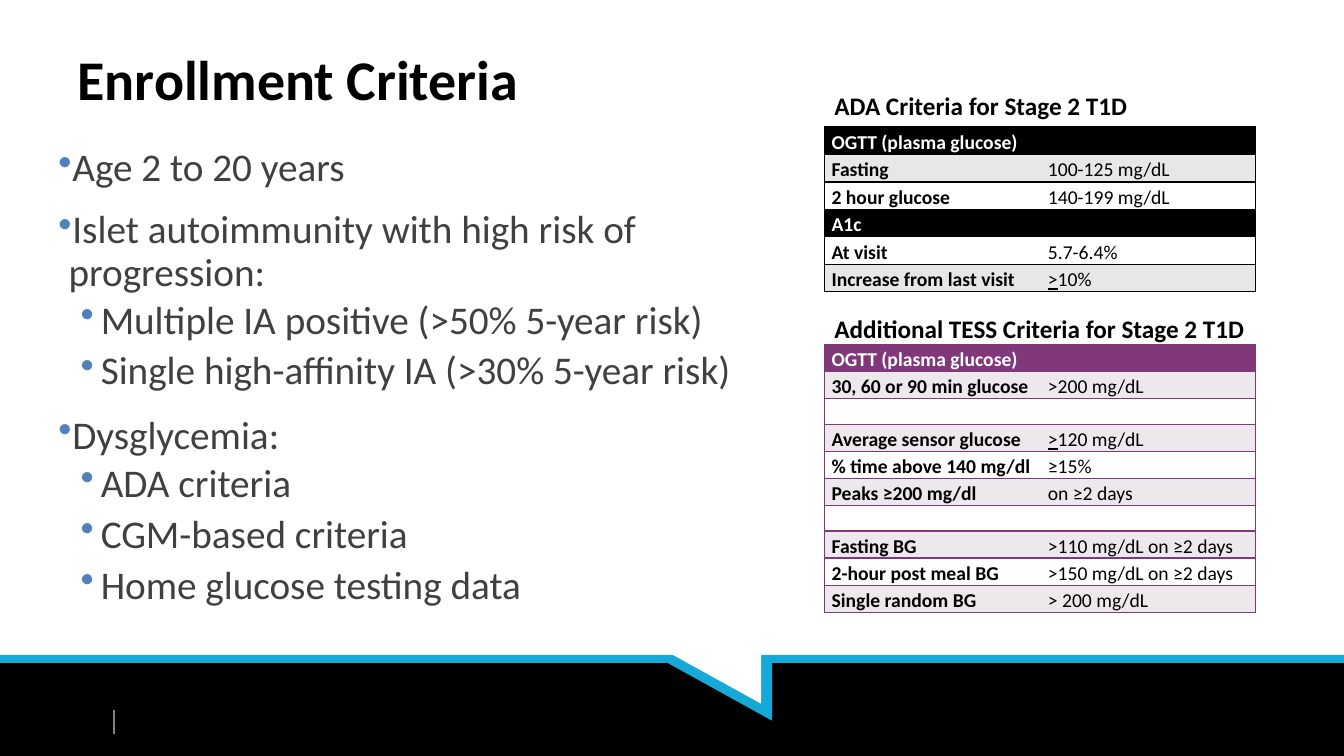
"""Build the Enrollment Criteria slide with its two glucose tables."""
from lxml.etree import SubElement as Sub
from pptx import Presentation
from pptx.dml.color import RGBColor
from pptx.enum.shapes import MSO_CONNECTOR as Link, MSO_SHAPE as Kind
from pptx.enum.text import MSO_ANCHOR as Anchor, PP_ALIGN as Align
from pptx.oxml.ns import qn
from pptx.util import Pt

FONT = "Calibri"
BLACK, WHITE, BLUE, PLUM = "000000", "FFFFFF", "14A9D8", "80387B"
GREY, MAUVE = "E7E7E7", "EDE8EC"
TITLE = "Enrollment Criteria"
POINTS = [
    (0, "Age 2 to 20 years"),
    (0, "Islet autoimmunity with high risk of progression:"),
    (1, "Multiple IA positive (>50% 5-year risk)"),
    (1, "Single high-affinity IA (>30% 5-year risk)"),
    (0, "Dysglycemia:"),
    (1, "ADA criteria"),
    (1, "CGM-based criteria"),
    (1, "Home glucose testing data"),
]
# Each level: left margin, first indent, space before, space after.
LEVELS = [(7.2, -7.2, 12, 2), (30.2, -14.4, 2, 4)]
ADA = [
    (BLACK, "OGTT (plasma glucose)", ""),
    (GREY, "Fasting", "100-125 mg/dL"),
    (WHITE, "2 hour glucose", "140-199 mg/dL"),
    (BLACK, "A1c", ""),
    (WHITE, "At visit", "5.7-6.4%"),
    (GREY, "Increase from last visit", (">", "10%")),
]
TESS = [
    (PLUM, "OGTT (plasma glucose)", ""),
    (MAUVE, "30, 60 or 90 min glucose", ">200 mg/dL"),
    (WHITE, "", ""),
    (MAUVE, "Average sensor glucose", (">", "120 mg/dL")),
    (WHITE, "% time above 140 mg/dl", "≥15%"),
    (MAUVE, "Peaks ≥200 mg/dl", "on ≥2 days"),
    (WHITE, "", ""),
    (MAUVE, "Fasting BG", ">110 mg/dL on ≥2 days"),
    (WHITE, "2-hour post meal BG", ">150 mg/dL on ≥2 days"),
    (MAUVE, "Single random BG", "> 200 mg/dL"),
]
LEFT, COLS, ROW = 589, (154.5, 153.5), 18.25
TABLES = [
    ("ADA Criteria for Stage 2 T1D", 61.2, 244, 90.7, BLACK, ADA),
    ("Additional TESS Criteria for Stage 2 T1D", 220.3, 335.5, 246.2, PLUM, TESS),
]
SHAPES = [
    (Kind.RECTANGLE, 0, 470.9, 960, 69.1, BLACK, 0),
    (Kind.RIGHT_TRIANGLE, 475.9, 473, 75.6, 41.8, BLUE, 180),
    (Kind.RIGHT_TRIANGLE, 468, 460.8, 75.6, 41.8, WHITE, 180),
]
LINES = [(0, 470.9, 960, 470.9, BLUE, 6), (81.4, 506.9, 81.4, 524.2, "808080", 1)]


def rgb(code):
    return RGBColor.from_string(code)


def style(par, size, color, bold=False):
    font = par.font
    font.name, font.size, font.bold = FONT, Pt(size), bold
    font.color.rgb = rgb(color)


def draw(slide, kind, x, y, w, h, color, turn):
    shape = slide.shapes.add_shape(kind, Pt(x), Pt(y), Pt(w), Pt(h))
    shape.shadow.inherit = False
    shape.fill.solid()
    shape.fill.fore_color.rgb = rgb(color)
    shape.line.fill.background()
    shape.rotation = turn


def rule(slide, x, y, right, low, color, width):
    line = slide.shapes.add_connector(Link.STRAIGHT, Pt(x), Pt(y), Pt(right), Pt(low))
    line.line.color.rgb = rgb(color)
    line.line.width = Pt(width)
    Sub(line._element.spPr, qn("a:effectLst"))


def write(slide, x, y, w, h):
    frame = slide.shapes.add_textbox(Pt(x), Pt(y), Pt(w), Pt(h)).text_frame
    frame.word_wrap = True
    return frame


def list_points(slide):
    frame = write(slide, 41.8, 102.2, 509, 358.6)
    frame.margin_left = frame.margin_right = 0
    for i, (level, text) in enumerate(POINTS):
        par = frame.add_paragraph() if i else frame.paragraphs[0]
        margin, indent, before, after = LEVELS[level]
        par.text, par.level, par.line_spacing = text, level, 0.9
        par.space_before, par.space_after = Pt(before if i else 0), Pt(after)
        props = par._p.get_or_add_pPr()
        props.set("marL", str(Pt(margin)))
        props.set("indent", str(Pt(indent)))
        Sub(Sub(props, qn("a:buClr")), qn("a:srgbClr"), val="4F81BD")
        Sub(props, qn("a:buChar"), char="•")
        style(par, 28, "404040")


def edge(cell, col, color):
    props = cell._tc.get_or_add_tcPr()
    inner = "R" if col == 0 else "L"
    for side in "LRTB":
        line = Sub(props, qn("a:ln" + side), w=str(Pt(1)))
        if side == inner:
            Sub(line, qn("a:noFill"))
        else:
            Sub(Sub(line, qn("a:solidFill")), qn("a:srgbClr"), val=color)


def fill_cell(cell, col, text, back, color):
    edge(cell, col, color)
    cell.fill.solid()
    cell.fill.fore_color.rgb = rgb(back)
    cell.margin_left = cell.margin_right = Pt(5)
    cell.margin_top = cell.margin_bottom = 0
    par = cell.text_frame.paragraphs[0]
    par.line_spacing = 1.15
    style(par, 14, WHITE if back == color else BLACK, col == 0)
    if isinstance(text, tuple):
        for i, part in enumerate(text):
            run = par.add_run()
            run.text, run.font.underline = part, i == 0
    elif text:
        par.add_run().text = text
    else:
        Sub(par._p, qn("a:endParaRPr"), sz="1400")


def add_grid(slide, head, top, width, y, color, rows):
    frame = slide.shapes.add_table(
        len(rows), 2, Pt(LEFT), Pt(y), Pt(sum(COLS)), Pt(ROW * len(rows)))
    grid = frame.table
    grid.first_row = grid.horz_banding = False
    for col, wide in zip(grid.columns, COLS):
        col.width = Pt(wide)
    for r, (back, *texts) in enumerate(rows):
        grid.rows[r].height = Pt(ROW)
        for c, text in enumerate(texts):
            fill_cell(grid.cell(r, c), c, text, back, color)
    par = write(slide, LEFT, top, width, 29).paragraphs[0]
    par.text = head
    style(par, 18, BLACK, True)


def main():
    deck = Presentation()
    deck.slide_width, deck.slide_height = Pt(960), Pt(540)
    slide = deck.slides.add_slide(deck.slide_layouts[5])
    for item in SHAPES[:1]:
        draw(slide, *item)
    rule(slide, *LINES[0])
    for item in SHAPES[1:]:
        draw(slide, *item)
    rule(slide, *LINES[1])
    title = slide.shapes.title
    title.left, title.top, title.width, title.height = Pt(48.2), Pt(21.6), Pt(864), Pt(69)
    title.text_frame.text = TITLE
    title.text_frame.vertical_anchor = Anchor.MIDDLE
    par = title.text_frame.paragraphs[0]
    par.alignment = Align.LEFT
    style(par, 40, BLACK, True)
    for item in TABLES:
        add_grid(slide, *item)
    list_points(slide)
    deck.save("out.pptx")


if __name__ == "__main__":
    main()
